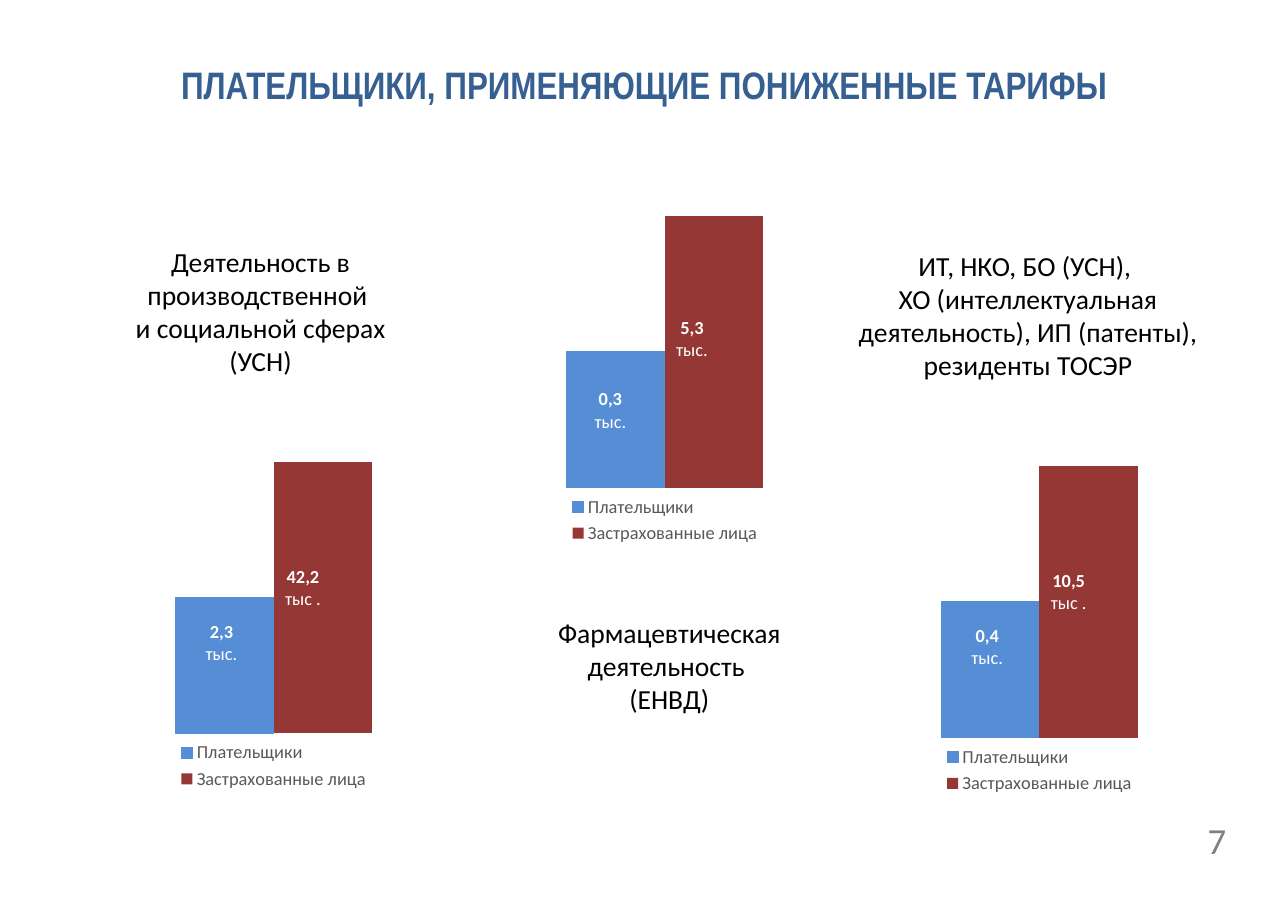
"""Slide with three column charts of insurance payers on reduced tariffs."""
from lxml import etree
from pptx import Presentation
from pptx.chart.data import CategoryChartData
from pptx.dml.color import RGBColor
from pptx.enum.chart import XL_CHART_TYPE, XL_LEGEND_POSITION
from pptx.enum.text import MSO_ANCHOR, MSO_AUTO_SIZE, PP_ALIGN
from pptx.oxml.ns import qn
from pptx.util import Inches, Pt

COLUMN = XL_CHART_TYPE.COLUMN_CLUSTERED
BOTTOM = XL_LEGEND_POSITION.BOTTOM
MIDDLE, TOP = MSO_ANCHOR.MIDDLE, MSO_ANCHOR.TOP
GROW, FIXED = MSO_AUTO_SIZE.SHAPE_TO_FIT_TEXT, MSO_AUTO_SIZE.NONE
CENTER, LEFT = PP_ALIGN.CENTER, PP_ALIGN.LEFT

BLACK = RGBColor(0x00, 0x00, 0x00)
WHITE = RGBColor(0xFF, 0xFF, 0xFF)
GRAY = RGBColor(0x80, 0x80, 0x80)
DARK_GRAY = RGBColor(0x59, 0x59, 0x59)
NAVY = RGBColor(0x37, 0x60, 0x92)
BLUE = RGBColor(0x55, 0x8E, 0xD5)
RED = RGBColor(0x95, 0x37, 0x35)

TITLE = "ПЛАТЕЛЬЩИКИ, ПРИМЕНЯЮЩИЕ ПОНИЖЕННЫЕ ТАРИФЫ"
PAGE = "7"
SERIES = [("Плательщики", 50, BLUE), ("Застрахованные лица", 100, RED)]
CHART_SIZE = (3.31, 3.55)
LABEL_SIZE = (0.58, 0.5)
LABEL_STEP = 0.74
PLOT = {"x": 0.028, "y": 0.035, "w": 0.944, "h": 0.81}
AXIS_MAX = 116.5

GROUPS = [
    {"chart": (0.83, 3.66), "label_left": 0.89,
     "labels": [("2,3 ", "тыс.", 1.92), ("42,2 ", "тыс .", 1.42)],
     "box": (0.83, 2.17, 3.07, 1.31),
     "text": ["Деятельность в производственной ", "и социальной сферах (УСН)"]},
    {"chart": (4.38, 1.43), "label_left": 0.87,
     "labels": [("0,3 ", "тыс.", 2.04), ("5,3 ", "тыс.", 1.39)],
     "box": (4.54, 5.54, 3.07, 1.01),
     "text": ["Фармацевтическая деятельность ", "(ЕНВД)"]},
    {"chart": (7.78, 3.7), "label_left": 0.89,
     "labels": [("0,4 ", "тыс.", 1.92), ("10,5 ", "тыс .", 1.42)],
     "box": (7.61, 2.21, 3.44, 1.31),
     "text": ["ИТ, НКО, БО (УСН), ",
              "ХО (интеллектуальная деятельность), ИП (патенты), резиденты ТОСЭР"]},
]


def set_font(font, color, **values):
    for name, value in {"name": "Calibri", **values}.items():
        setattr(font, name, value)
    font.color.rgb = color


def add_text(s, box, paragraphs, color, size, align=CENTER, font="Calibri", **frame):
    """Add a text box whose paragraphs are lists of (text, bold) runs."""
    tf = s.shapes.add_textbox(*map(Inches, box)).text_frame
    for name, value in {"word_wrap": True, "auto_size": GROW,
                        "vertical_anchor": TOP, **frame}.items():
        setattr(tf, name, value)
    for i, runs in enumerate(paragraphs):
        p = tf.add_paragraph() if i else tf.paragraphs[0]
        p.alignment = align
        for text, bold in runs:
            r = p.add_run()
            r.text = text
            set_font(r.font, color, name=font, size=Pt(size), bold=bold)
    return tf


def set_plot_layout(chart):
    area = chart._chartSpace.chart.plotArea
    for old in area.findall(qn("c:layout")):
        area.remove(old)
    layout = etree.Element(qn("c:layout"))
    manual = etree.SubElement(layout, qn("c:manualLayout"))
    modes = {"layoutTarget": "inner", "xMode": "edge", "yMode": "edge"}
    for tag, value in {**modes, **PLOT}.items():
        etree.SubElement(manual, qn("c:" + tag)).set("val", str(value))
    area.insert(0, layout)


def add_columns(s, place):
    data = CategoryChartData()
    data.categories = ["1"]
    for name, value, _ in SERIES:
        data.add_series(name, [value])
    chart = s.shapes.add_chart(COLUMN, *map(Inches, place + CHART_SIZE), data).chart
    set_font(chart.font, BLACK, size=Pt(10))
    chart.has_title = False
    chart.has_legend = True
    chart.legend.position = BOTTOM
    chart.legend.include_in_layout = False
    set_font(chart.legend.font, DARK_GRAY, size=Pt(12))
    axis = chart.value_axis
    axis.minimum_scale, axis.maximum_scale = 0, AXIS_MAX
    axis.has_major_gridlines = False
    axis.visible = chart.category_axis.visible = False
    plot = chart.plots[0]
    plot.gap_width, plot.overlap, plot.vary_by_categories = 150, 0, False
    for ser, (_, _, color) in zip(plot.series, SERIES):
        ser.format.fill.solid()
        ser.format.fill.fore_color.rgb = color
    line = plot.series[0].format.line
    line.color.rgb, line.width = BLUE, Pt(0.75)
    set_plot_layout(chart)


def main():
    prs = Presentation()
    prs.slide_width, prs.slide_height = Inches(11.69), Inches(8.27)
    s = prs.slides.add_slide(prs.slide_layouts[6])
    fixed = {"auto_size": FIXED, "vertical_anchor": MIDDLE,
             "margin_top": Inches(0.06), "margin_bottom": Inches(0.06)}
    add_text(s, (0, 0.52, 11.69, 0.48), [[(TITLE, True)]], NAVY, 25,
             font="Arial Narrow", **fixed)
    tf = add_text(s, (10.7, 7.28, 0.79, 0.76), [[(PAGE, False)]], GRAY, 24,
                  align=LEFT, margin_left=Inches(0.26), **fixed)
    tf.paragraphs[0].line_spacing = Pt(24)
    for group in GROUPS:
        left, top = group["chart"]
        add_columns(s, group["chart"])
        add_text(s, group["box"], [[(t, False)] for t in group["text"]], BLACK, 18)
        for i, (number, unit, drop) in enumerate(group["labels"]):
            x = left + group["label_left"] + i * LABEL_STEP
            add_text(s, (x, top + drop) + LABEL_SIZE,
                     [[(number, True), (unit, False)]], WHITE, 12)
    prs.save("out.pptx")


if __name__ == "__main__":
    main()
